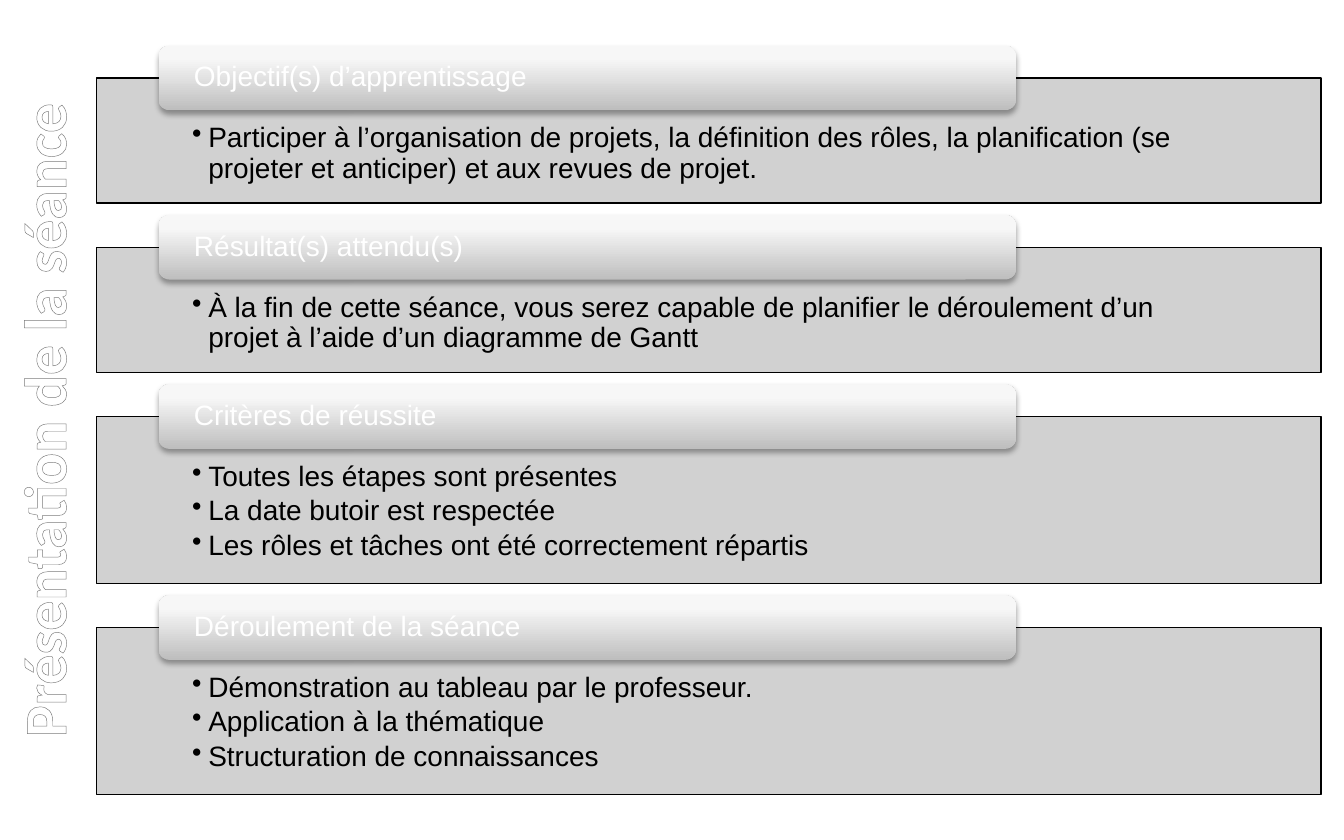
from lxml import etree
from pptx import Presentation
from pptx import util as u
from pptx.dml.color import RGBColor
from pptx.enum import shapes, text
from pptx.oxml.ns import qn

TITLE = "Présentation de la séance"

# Heading, panel height in inches, bullet points
SECTIONS = [
    ("Objectif(s) d’apprentissage", 0.93, [
        "Participer à l’organisation de projets, la définition des rôles, "
        "la planification (se projeter et anticiper) et aux revues de projet."]),
    ("Résultat(s) attendu(s)", 0.93, [
        "À la fin de cette séance, vous serez capable de planifier "
        "le déroulement d’un projet à l’aide d’un diagramme de Gantt"]),
    ("Critères de réussite", 1.24, [
        "Toutes les étapes sont présentes",
        "La date butoir est respectée",
        "Les rôles et tâches ont été correctement répartis"]),
    ("Déroulement de la séance", 1.24, [
        "Démonstration au tableau par le professeur.",
        "Application à la thématique",
        "Structuration de connaissances"]),
]

THEME = {
    "title_font": "Calibri", "body_font": "Arial",
    "title_size": 32, "body_size": 15,
    "light": "FFFFFF", "dark": "000000", "outline": "7C7C7C",
    "panel": "CCCCCC", "panel_alpha": 90, "shadow_alpha": 35,
    "tab": [(0, "BEBEBE"), (80, "F7F7F7"), (100, "F8F8F8")],
}

SLIDE_W, SLIDE_H = 10, 6.25
TITLE_H = 0.63
PANEL_X, PANEL_W, FIRST_Y, GAP = 0.72, 9.11, 0.58, 0.33
TAB_X, TAB_W, TAB_H, TAB_RISE = 1.18, 6.38, 0.48, 0.24
HANG = 0.12


def add_node(parent, tag, **attributes):
    return etree.SubElement(parent, qn(tag),
                            {key: str(value) for key, value in attributes.items()})


def add_color(parent, color, alpha=100):
    node = add_node(parent, "a:srgbClr", val=color)
    if alpha < 100:
        add_node(node, "a:alpha", val=alpha * 1000)


def write(box, lines, *, font, size, color, bold=False, align=text.PP_ALIGN.LEFT,
          anchor=text.MSO_ANCHOR.MIDDLE, insets=(0.1, 0.05, 0.1, 0.05),
          spacing=1.0, after=0, bullet=None, outline=None):
    frame = box.text_frame
    frame.word_wrap = True
    frame.vertical_anchor = anchor
    (frame.margin_left, frame.margin_top,
     frame.margin_right, frame.margin_bottom) = map(u.Inches, insets)
    for index, line in enumerate(lines):
        para = frame.add_paragraph() if index else frame.paragraphs[0]
        para.alignment = align
        para.line_spacing = spacing
        para.space_after = u.Pt(after)
        if bullet:
            para.level = 1
            properties = para._p.get_or_add_pPr()
            properties.set("marL", str(u.Inches(HANG)))
            properties.set("indent", str(-u.Inches(HANG)))
            add_node(properties, "a:buChar", char=bullet)
        span = para.add_run()
        span.text = line
        span.font.name = font
        span.font.size = u.Pt(size)
        span.font.bold = bold
        span.font.color.rgb = RGBColor.from_string(color)
        if outline:
            properties = span._r.get_or_add_rPr()
            edge = add_node(properties, "a:ln", w=u.Pt(0.75))
            add_color(add_node(edge, "a:solidFill"), outline)
            properties.insert(0, edge)


def add_box(page, kind, x, y, width, height):
    box = page.shapes.add_shape(kind, *map(u.Inches, (x, y, width, height)))
    box.shadow.inherit = False
    return box


def add_panel(page, y, height, points):
    panel = add_box(page, shapes.MSO_SHAPE.RECTANGLE, PANEL_X, y, PANEL_W, height)
    panel.fill.solid()
    panel.fill.fore_color.rgb = RGBColor.from_string(THEME["panel"])
    color = panel._element.spPr.find(qn("a:solidFill"))[0]
    add_node(color, "a:alpha", val=THEME["panel_alpha"] * 1000)
    panel.line.color.rgb = RGBColor.from_string(THEME["dark"])
    panel.line.width = u.Pt(0.75)
    write(panel, points, font=THEME["body_font"], size=THEME["body_size"],
          color=THEME["dark"], anchor=text.MSO_ANCHOR.TOP,
          insets=(0.71, 0.34, 0.71, 0.12), spacing=0.9, after=2.25, bullet="•")


def add_tab(page, y, heading):
    tab = add_box(page, shapes.MSO_SHAPE.ROUNDED_RECTANGLE, TAB_X, y, TAB_W, TAB_H)
    tab.line.fill.background()
    tab.fill.gradient()
    tab.fill.gradient_angle = 90
    properties = tab._element.spPr
    stops = properties.find(qn("a:gradFill")).find(qn("a:gsLst"))
    for stop in list(stops):
        stops.remove(stop)
    for position, color in THEME["tab"]:
        add_color(add_node(stops, "a:gs", pos=position * 1000), color)
    shadow = add_node(properties.find(qn("a:effectLst")), "a:outerShdw",
                      blurRad=u.Pt(3.1), dist=u.Pt(1.8), dir=90 * 60000,
                      rotWithShape=0)
    add_color(shadow, THEME["dark"], THEME["shadow_alpha"])
    write(tab, [heading], font=THEME["body_font"], size=THEME["body_size"],
          color=THEME["light"], insets=(0.24, 0, 0.24, 0), spacing=0.9)


def main():
    deck = Presentation()
    deck.slide_width, deck.slide_height = u.Inches(SLIDE_W), u.Inches(SLIDE_H)
    page = deck.slides.add_slide(deck.slide_layouts[6])

    # Vertical title, as long as the slide is high, along the left edge
    title = page.shapes.add_textbox(
        u.Inches((TITLE_H - SLIDE_H) / 2), u.Inches((SLIDE_H - TITLE_H) / 2),
        u.Inches(SLIDE_H), u.Inches(TITLE_H))
    title.rotation = 270
    write(title, [TITLE], font=THEME["title_font"], size=THEME["title_size"],
          color=THEME["light"], bold=True, align=text.PP_ALIGN.CENTER,
          outline=THEME["outline"])
    title.text_frame.auto_size = text.MSO_AUTO_SIZE.SHAPE_TO_FIT_TEXT

    # Stacked panels, each with a heading tab over its top edge
    y = FIRST_Y
    for heading, height, points in SECTIONS:
        add_panel(page, y, height, points)
        add_tab(page, y - TAB_RISE, heading)
        y += height + GAP

    deck.save("out.pptx")


if __name__ == "__main__":
    main()
